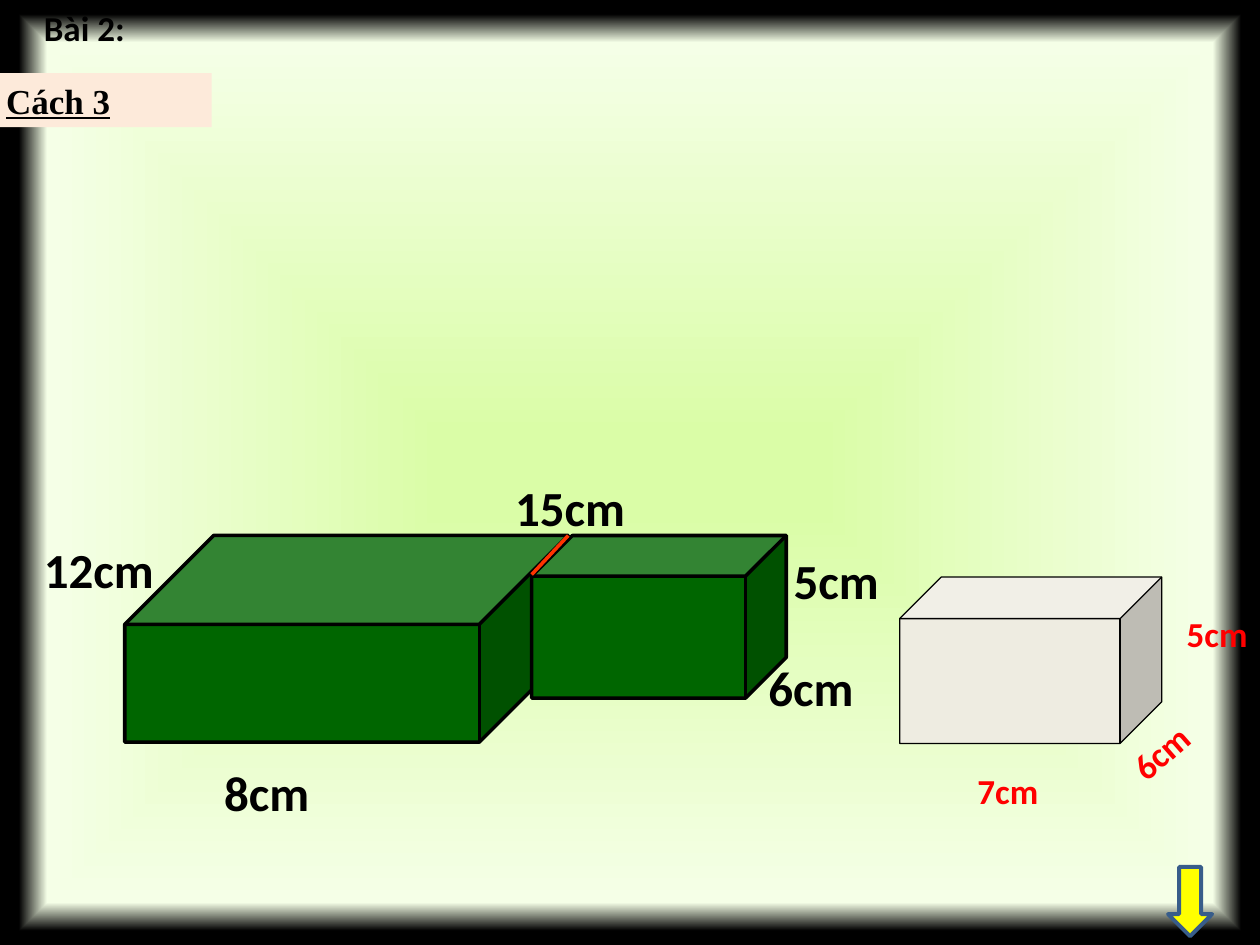
import pptx
import pptx.util
import pptx.dml.color
import pptx.enum.shapes
import pptx.enum.text
import pptx.oxml.ns
from lxml import etree

Inches, Pt = pptx.util.Inches, pptx.util.Pt
MSO = pptx.enum.shapes.MSO_SHAPE

# Content: boxes are (left, top, width, height) in inches
GRADIENT = [(8, "DAFDA7", 100), (91, "F5FFE7", 100), (97, "000000", 0)]
CUBES = [  # box, depth, fill, line width
    ((0.99, 4.25, 3.52, 1.64), 0.43, "006600", 2),
    ((4.22, 4.25, 2.02, 1.29), 0.25, "006600", 2),
    ((7.14, 4.58, 2.08, 1.32), 0.25, "EEECE1", 0.75),
]
SEAM = (4.22, 4.56, 4.51, 4.25)
LABELS = [  # text, box, size, colour, rotation
    ("12cm", (0.25, 4.23, 1.5, 0.41), 28, "000000", 0),
    ("15cm", (3.99, 3.74, 1.61, 0.41), 28, "000000", 0),
    ("5cm", (6.2, 4.32, 0.98, 0.57), 28, "000000", 0),
    ("6cm", (6, 5.17, 0.91, 0.57), 28, "000000", 0),
    ("8cm", (1.68, 6, 0.92, 0.57), 28, "000000", 0),
    ("7cm", (7.66, 6.06, 0.97, 0.43), 20, "FF0000", 0),
    ("5cm", (9.32, 4.81, 0.97, 0.43), 20, "FF0000", 0),
    ("6cm", (8.79, 5.54, 1.32, 0.43), 20, "FF0000", 318.7),
    ("Bài 2:", (0.25, 0, 2.17, 0.43), 20, "000000", 0),
]
ARROW = (9.17, 6.98, 0.55, 0.35)
METHOD = ("Cách 3", (-0.05, 0.58, 1.73, 0.43))


def rgb(value):
    return pptx.dml.color.RGBColor.from_string(value)


def add_child(parent, tag, **attrs):
    return etree.SubElement(parent, pptx.oxml.ns.qn(tag), **attrs)


def set_background(slide):
    fill = slide.background.fill
    fill.gradient()
    grad = slide.background._cSld.find(".//" + pptx.oxml.ns.qn("a:gradFill"))
    for child in list(grad):
        grad.remove(child)
    stops = add_child(grad, "a:gsLst")
    for pos, colour, alpha in GRADIENT:
        stop = add_child(stops, "a:gs", pos=str(pos * 1000))
        clr = add_child(stop, "a:srgbClr", val=colour)
        if alpha < 100:
            add_child(clr, "a:alpha", val=str(alpha * 1000))
    shade = add_child(grad, "a:path", path="shape")
    add_child(shade, "a:fillToRect", l="50000", t="50000", r="50000", b="50000")


def add_shape(slide, kind, box, fill, line=None, width=0):
    sp = slide.shapes.add_shape(kind, *map(Inches, box))
    sp.shadow.inherit = False
    sp.fill.solid()
    sp.fill.fore_color.rgb = rgb(fill)
    if line:
        sp.line.color.rgb = rgb(line)
        sp.line.width = Pt(width)
    else:
        sp.line.fill.background()
    return sp


def write(sp, text, size, colour, font="Calibri", underline=None):
    tf = sp.text_frame
    tf.word_wrap = True
    tf.vertical_anchor = pptx.enum.text.MSO_ANCHOR.TOP
    p = tf.paragraphs[0]
    p.alignment = pptx.enum.text.PP_ALIGN.LEFT
    r = p.add_run()
    r.text = text
    r.font.name, r.font.size, r.font.bold = font, Pt(size), True
    r.font.underline = underline
    r.font.color.rgb = rgb(colour)


def main():
    prs = pptx.Presentation()
    prs.slide_width, prs.slide_height = Inches(10), Inches(7.5)
    s = prs.slides.add_slide(prs.slide_layouts[6])
    set_background(s)

    # Cuboids
    for box, depth, fill, width in CUBES:
        sp = add_shape(s, MSO.CUBE, box, fill, "000000", width)
        sp.adjustments[0] = depth

    # Seam where the two green blocks meet
    seam = s.shapes.add_connector(
        pptx.enum.shapes.MSO_CONNECTOR.STRAIGHT, *map(Inches, SEAM))
    seam.line.color.rgb = rgb("FF3300")
    seam.line.width = Pt(2)
    add_child(seam._element.spPr, "a:effectLst")

    # Dimensions and exercise number
    for text, box, size, colour, rotation in LABELS:
        sp = s.shapes.add_textbox(*map(Inches, box))
        sp.rotation = rotation
        write(sp, text, size, colour)

    # Arrow pointing down and method heading
    add_shape(s, MSO.RIGHT_ARROW, ARROW, "FFFF00", "385D8A", 2.25).rotation = 90
    text, box = METHOD
    sp = add_shape(s, MSO.RECTANGLE, box, "FDEADA")
    write(sp, text, 20, "000000", "Times New Roman", True)

    prs.save("out.pptx")


if __name__ == "__main__":
    main()
